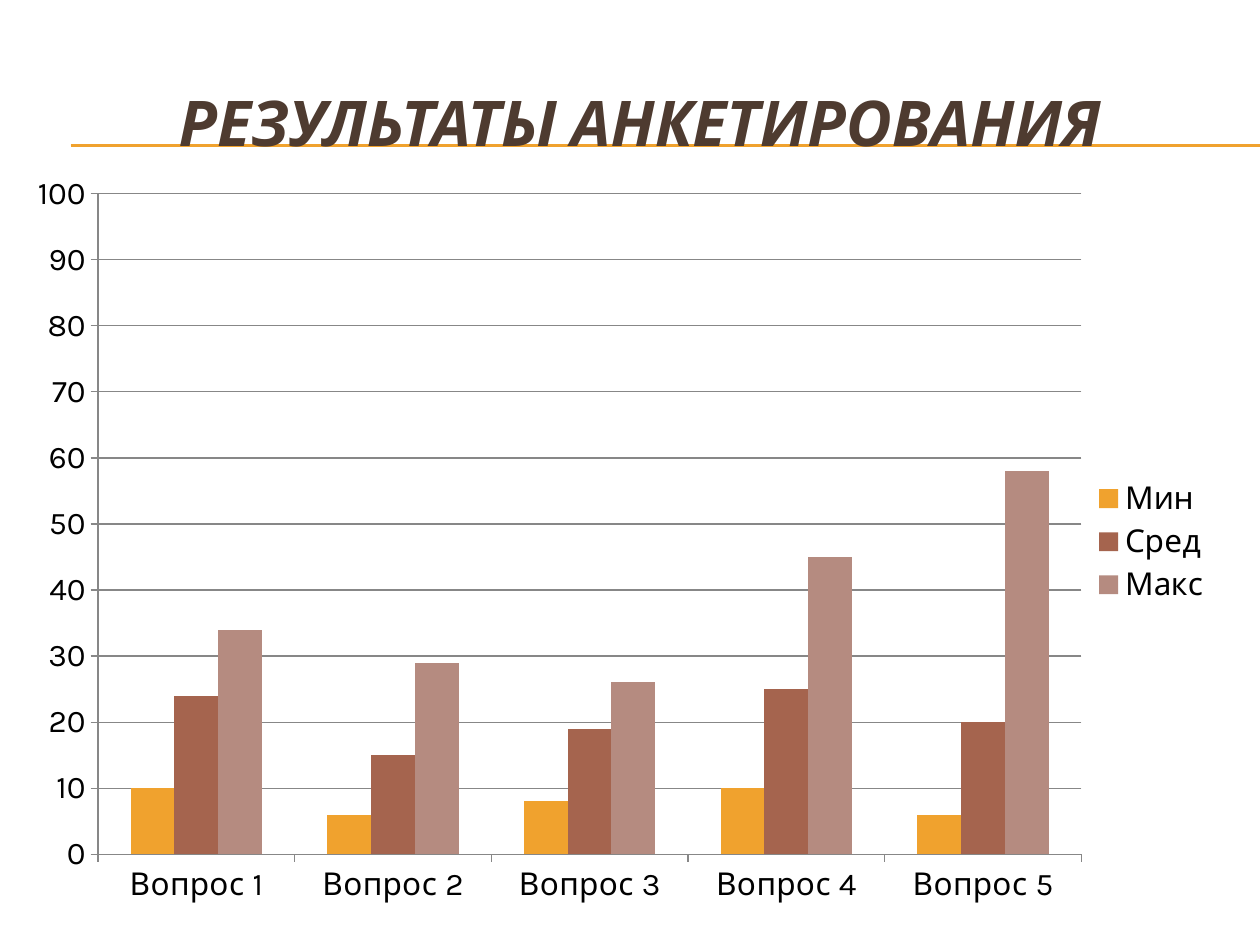
from lxml import etree
from pptx import Presentation
from pptx.chart.data import CategoryChartData
from pptx.dml.color import RGBColor
from pptx.enum.chart import XL_CHART_TYPE, XL_LEGEND_POSITION, XL_TICK_MARK
from pptx.enum.shapes import MSO_CONNECTOR
from pptx.enum.text import MSO_ANCHOR, PP_ALIGN
from pptx.oxml import parse_xml
from pptx.oxml.ns import nsdecls, qn
from pptx.util import Inches, Pt

COLUMNS = XL_CHART_TYPE.COLUMN_CLUSTERED
RIGHT = XL_LEGEND_POSITION.RIGHT
OUTSIDE = XL_TICK_MARK.OUTSIDE
STRAIGHT = MSO_CONNECTOR.STRAIGHT
MIDDLE, CENTER = MSO_ANCHOR.MIDDLE, PP_ALIGN.CENTER

# Content
TITLE = "РЕЗУЛЬТАТЫ АНКЕТИРОВАНИЯ"
QUESTIONS = [f"Вопрос {n}" for n in range(1, 6)]
SERIES = [
    ("Мин", (10, 6, 8, 10, 6), "F0A22E"),
    ("Сред", (24, 15, 19, 25, 20), "A5644E"),
    ("Макс", (34, 29, 26, 45, 58), "B58B80"),
]

# Theme and layout
THEME = dict(font="Karla", title="4E3B30", rule="F0A22E", text="000000",
             axis="878787", title_size=36, chart_size=18, line=0.75)
W, H = 10, 7.5
RULE_LEFT, RULE_TOPS = 0.56, (1.15, 1.16)
TITLE_BOX = (0.33, 0.5, 9.5, 0.92)
CHART_BOX = (0, 1.31, 9.72, 5.98)
PLOT = dict(x=0.08, y=0.038, w=0.803, h=0.877)  # shares of the chart


def rgb(name):
    return RGBColor.from_string(THEME[name])


def style(font, size, color, **flags):
    font.name, font.size = THEME["font"], Pt(THEME[size])
    font.color.rgb = rgb(color)
    for flag, value in flags.items():
        setattr(font, flag, value)


def style_line(line, color):
    line.color.rgb = rgb(color)
    line.width = Pt(THEME["line"])


def place_plot(chart):
    parts = [("layoutTarget", "inner"), ("xMode", "edge"), ("yMode", "edge"),
             *PLOT.items()]
    body = "".join(f'<c:{tag} val="{val}"/>' for tag, val in parts)
    layout = parse_xml(f'<c:layout {nsdecls("c")}><c:manualLayout>{body}'
                       '</c:manualLayout></c:layout>')
    area = chart._chartSpace.chart.plotArea
    for old in area.findall(qn("c:layout")):
        area.remove(old)
    area.insert(0, layout)


prs = Presentation()
prs.slide_width, prs.slide_height = Inches(W), Inches(H)
s = prs.slides.add_slide(prs.slide_layouts[6])

# Rules behind the title
for top in RULE_TOPS:
    rule = s.shapes.add_connector(STRAIGHT, Inches(RULE_LEFT), Inches(top),
                                  Inches(W), Inches(top))
    style_line(rule.line, "rule")
    etree.SubElement(rule._element.spPr, qn("a:effectLst"))

# Title
tf = s.shapes.add_textbox(*map(Inches, TITLE_BOX)).text_frame
tf.word_wrap, tf.vertical_anchor = True, MIDDLE
p = tf.paragraphs[0]
p.text, p.alignment = TITLE, CENTER
style(p.font, "title_size", "title", bold=True, italic=True)

# Chart
data = CategoryChartData()
data.categories = QUESTIONS
for name, values, _ in SERIES:
    data.add_series(name, values)
chart = s.shapes.add_chart(COLUMNS, *map(Inches, CHART_BOX), data).chart
style(chart.font, "chart_size", "text")
chart.has_title = False
chart.has_legend = True
chart.legend.position, chart.legend.include_in_layout = RIGHT, False
place_plot(chart)

plot = chart.plots[0]
plot.gap_width, plot.overlap, plot.vary_by_categories = 150, 0, False
for series, (_, _, color) in zip(plot.series, SERIES):
    series.format.fill.solid()
    series.format.fill.fore_color.rgb = RGBColor.from_string(color)

# Axes
val = chart.value_axis
val.minimum_scale, val.maximum_scale, val.major_unit = 0, 100, 10
val.has_major_gridlines = True
style_line(val.major_gridlines.format.line, "axis")
for axis in (val, chart.category_axis):
    axis.major_tick_mark = OUTSIDE
    style_line(axis.format.line, "axis")

prs.save("out.pptx")
